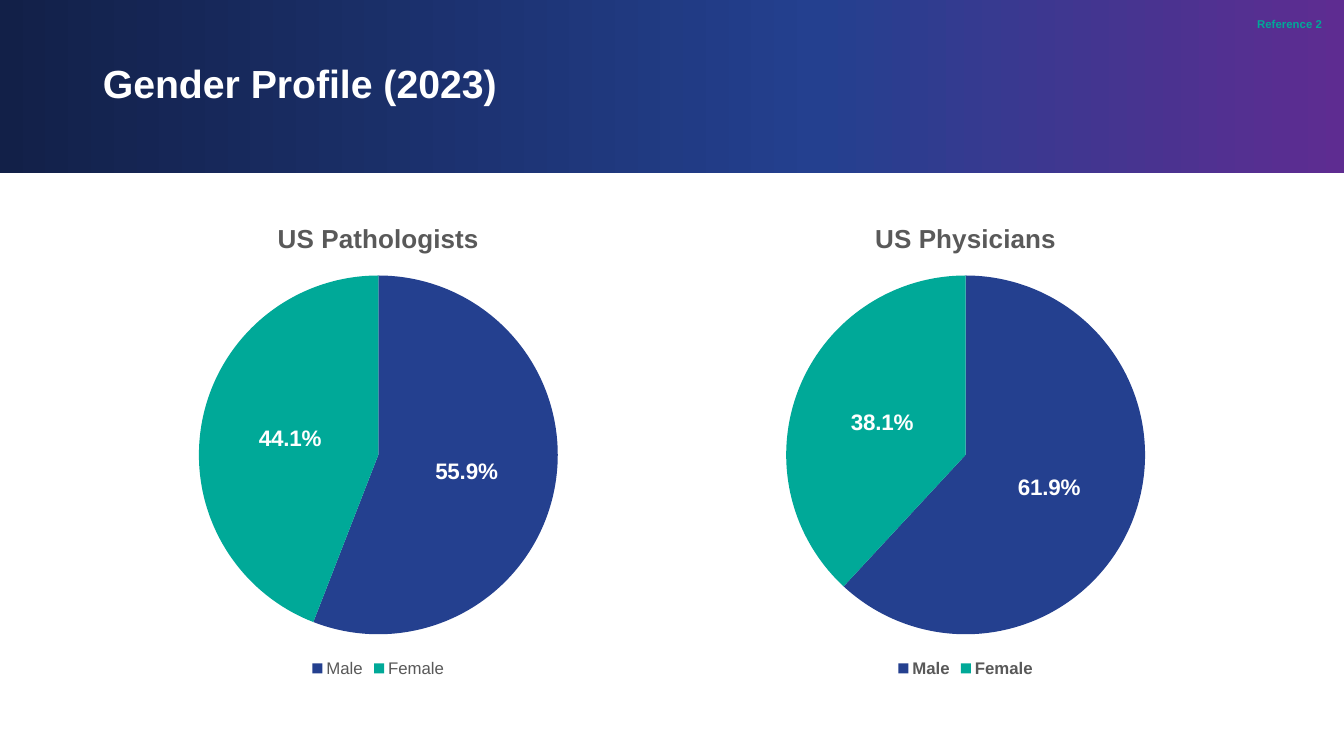
import lxml.etree
import pptx
import pptx.chart.data
import pptx.dml.color
import pptx.enum.chart
import pptx.enum.shapes
import pptx.enum.text
import pptx.oxml
import pptx.oxml.ns
import pptx.util

WIDTH, HEIGHT = 13.33, 7.5
MARGIN, GAP = 0.92, 0.16
CHART_WIDTH = (WIDTH - 2 * MARGIN - GAP) / 2
BAND_HEIGHT = 1.72
FONT = "Arial"
WHITE, GREY, BLUE, TEAL = "FFFFFF", "595959", "24408F", "00A998"
BAND_STOPS = [(0, "122048"), (61, BLUE), (100, "5E2C91")]
GENDERS = ["Male", "Female"]
CHARTS = [
    ("US Pathologists", (0.559, 0.441), False),
    ("US Physicians", (0.619, 0.381), True),
]


def color(hex_string):
    """Return the colour for a hex string."""
    return pptx.dml.color.RGBColor.from_string(hex_string)


def inches(*lengths):
    """Convert lengths in inches to slide units."""
    return [pptx.util.Inches(length) for length in lengths]


def style_font(font, size, hex_string, bold=True):
    """Set the typeface, size, colour and weight of a font."""
    font.name = FONT
    font.size = pptx.util.Pt(size)
    font.bold = bold
    font.color.rgb = color(hex_string)


def write_line(frame, text, size, hex_string, alignment):
    """Write one styled run into a text frame and return it."""
    frame.word_wrap = True
    paragraph = frame.paragraphs[0]
    paragraph.alignment = alignment
    paragraph.line_spacing = 0.9
    run = paragraph.add_run()
    run.text = text
    style_font(run.font, size, hex_string)
    return run


def add_header(slide, left, top, width, height):
    """Place the gradient band, the title and the reference mark."""
    band = slide.shapes.add_shape(
        pptx.enum.shapes.MSO_SHAPE.RECTANGLE, *inches(left, top, width, height)
    )
    band.shadow.inherit = False
    band.line.fill.background()
    band.fill.gradient()
    band.fill.gradient_angle = 0
    stop_list = band.element.spPr.find(".//" + pptx.oxml.ns.qn("a:gsLst"))
    for stop in list(stop_list):
        stop_list.remove(stop)
    for percent, hex_string in BAND_STOPS:
        stop = lxml.etree.SubElement(
            stop_list, pptx.oxml.ns.qn("a:gs"), pos=str(percent * 1000)
        )
        lxml.etree.SubElement(stop, pptx.oxml.ns.qn("a:srgbClr"), val=hex_string)

    title = slide.shapes.title
    title.element.addprevious(band.element)
    title.left, title.top, title.width, title.height = inches(
        left + MARGIN, top + 0.11, width - 2 * MARGIN, height - 0.23
    )
    title.text_frame.vertical_anchor = pptx.enum.text.MSO_ANCHOR.MIDDLE
    alignments = pptx.enum.text.PP_ALIGN
    write_line(title.text_frame, "Gender Profile (2023)", 28, WHITE, alignments.LEFT)

    reference = slide.shapes.add_textbox(
        *inches(left + width - 2.12, top + 0.12, 2, 0.28)
    )
    run = write_line(reference.text_frame, "Reference 2", 14, TEAL, alignments.RIGHT)
    run.font._element.set("baseline", "30000")


def add_gender_pie(slide, box, name, shares, bold_legend):
    """Place a titled pie chart of the gender shares in the box."""
    data = pptx.chart.data.CategoryChartData(number_format="0.0%")
    data.categories = GENDERS
    data.add_series(name, shares)
    chart = slide.shapes.add_chart(
        pptx.enum.chart.XL_CHART_TYPE.PIE, *inches(*box), data
    ).chart
    chart.font.name = FONT
    chart.font.size = pptx.util.Pt(10)

    chart.has_title = True
    run = chart.chart_title.text_frame.paragraphs[0].add_run()
    run.text = name
    style_font(run.font, 18.6, GREY)
    chart.chart_title.include_in_layout = False

    chart.has_legend = True
    chart.legend.position = pptx.enum.chart.XL_LEGEND_POSITION.BOTTOM
    chart.legend.include_in_layout = False
    style_font(chart.legend.font, 12, GREY, bold_legend)

    plot = chart.plots[0]
    plot.vary_by_categories = True
    for index, hex_string in enumerate((BLUE, TEAL)):
        fill = plot.series[0].points[index].format.fill
        fill.solid()
        fill.fore_color.rgb = color(hex_string)
    plot.has_data_labels = True
    labels = plot.data_labels
    labels.show_value = True
    labels.show_percentage = False
    labels.number_format = "0.0%"
    labels.number_format_is_linked = False
    labels.position = pptx.enum.chart.XL_LABEL_POSITION.CENTER
    style_font(labels.font, 16, WHITE)


def main():
    """Build and save the gender profile slide."""
    presentation = pptx.Presentation()
    presentation.slide_width, presentation.slide_height = inches(WIDTH, HEIGHT)
    slide = presentation.slides.add_slide(presentation.slide_layouts[5])
    add_header(slide, 0, 0, WIDTH, BAND_HEIGHT)
    for column, (name, shares, bold_legend) in enumerate(CHARTS):
        left = MARGIN + column * (CHART_WIDTH + GAP)
        add_gender_pie(slide, (left, 2, CHART_WIDTH, 4.76), name, shares, bold_legend)
    presentation.save("out.pptx")


if __name__ == "__main__":
    main()
